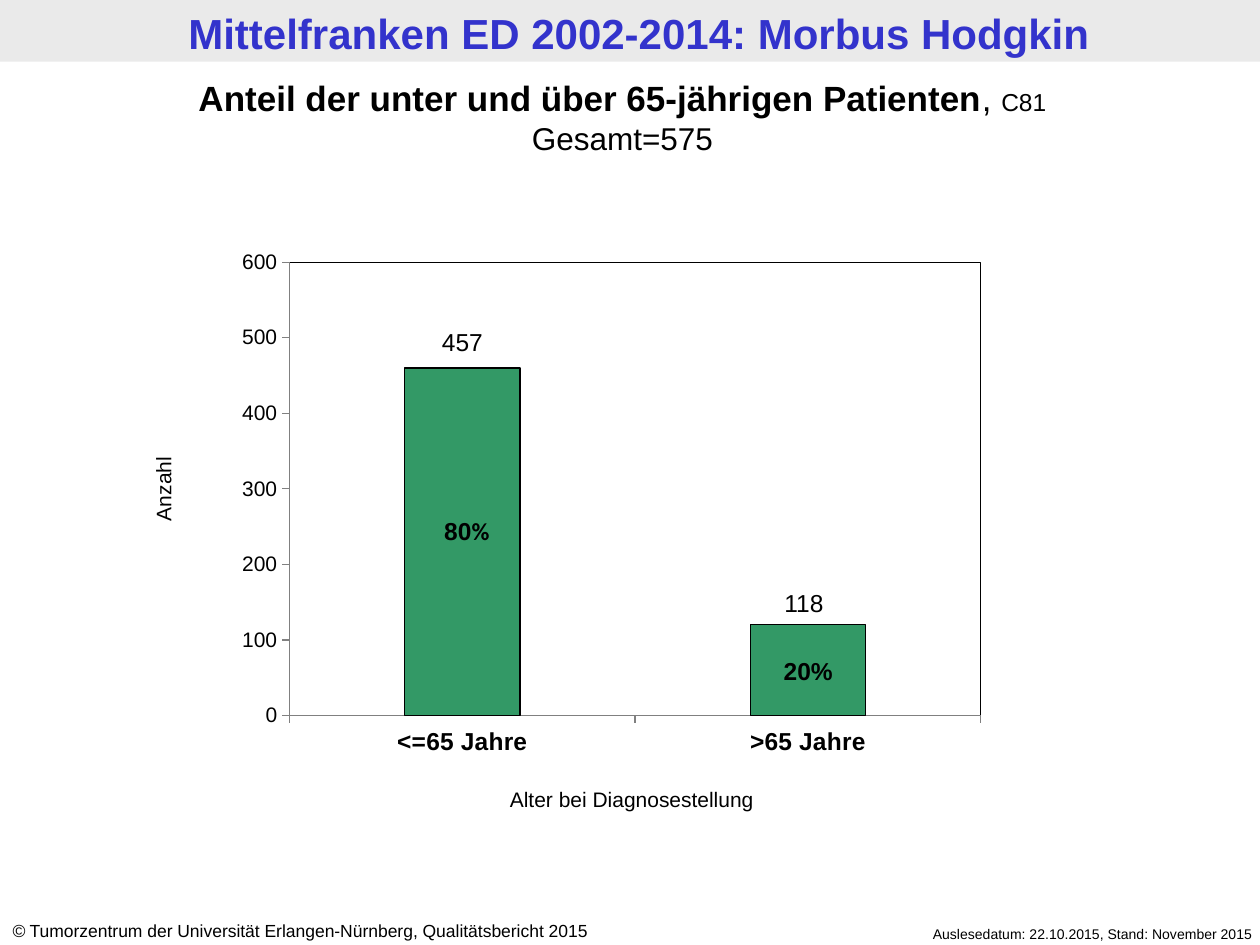
"""Build the Morbus Hodgkin age group slide with a column chart."""
from lxml.etree import SubElement
from pptx import Presentation
from pptx.chart.data import CategoryChartData
from pptx.dml.color import RGBColor
from pptx.enum.chart import XL_CHART_TYPE, XL_TICK_MARK
from pptx.enum.shapes import MSO_SHAPE
from pptx.enum.text import PP_ALIGN
from pptx.oxml import parse_xml
from pptx.oxml.ns import nsdecls, qn
from pptx.util import Inches, Pt

COLORS = {"band": "EAEAEA", "title": "3333CC", "text": "000000", "bar": "339966", "axis": "808080"}


def color(name):
    return RGBColor.from_string(COLORS[name])


def add_text(box, lines, align=PP_ALIGN.CENTER, fill="text", rotation=0):
    """Each line is (size, bold, runs); each run is (text, differing font settings)."""
    shape = slide.shapes.add_textbox(*[Inches(value) for value in box])
    shape.rotation = rotation
    frame = shape.text_frame
    frame.word_wrap = True
    for index, (size, bold, runs) in enumerate(lines):
        paragraph = frame.add_paragraph() if index else frame.paragraphs[0]
        paragraph.alignment = align
        paragraph.font.name = "Arial"
        paragraph.font.size = Pt(size)
        paragraph.font.bold = bold
        paragraph.font.color.rgb = color(fill)
        for text, settings in runs:
            run = paragraph.add_run()
            run.text = text
            for setting, value in settings.items():
                setattr(run.font, setting, value)


presentation = Presentation()
presentation.slide_width = Inches(10)
presentation.slide_height = Inches(7.5)
slide = presentation.slides.add_slide(presentation.slide_layouts[6])

band = slide.shapes.add_shape(MSO_SHAPE.RECTANGLE, 0, 0, Inches(10), Inches(0.49))
band.shadow.inherit = False
band.fill.solid()
band.fill.fore_color.rgb = color("band")
band.line.fill.background()

add_text((0.07, 0.01, 10, 0.49),
         [(24, True, [("Mittelfranken ED 2002-2014: Morbus Hodgkin", {})])], fill="title")
add_text((6.65, 7.3, 3.39, 0.24),
         [(8, False, [("Auslesedatum: 22.10.2015, Stand: November 2015", {})])], PP_ALIGN.RIGHT)
add_text((0, 7.25, 5.24, 0.27),
         [(10, False, [("©", {"italic": True}),
                       (" Tumorzentrum der Universität Erlangen-Nürnberg, Qualitätsbericht 2015", {})])],
         PP_ALIGN.LEFT)

data = CategoryChartData()
data.categories = ["<=65 Jahre", ">65 Jahre"]
data.add_series("Anzahl", [460, 120])
chart = slide.shapes.add_chart(XL_CHART_TYPE.COLUMN_STACKED, Inches(1.51), Inches(1.42),
                               Inches(6.98), Inches(4.66), data).chart
chart.has_legend = False
chart.has_title = False
chart.font.name = "Calibri"
chart.font.size = Pt(18)
chart.font.color.rgb = color("text")

plot = chart.plots[0]
plot.gap_width = 200
plot.overlap = 100
plot.vary_by_categories = False
series = plot.series[0]
series.format.fill.solid()
series.format.fill.fore_color.rgb = color("bar")
series.format.line.color.rgb = color("text")
series.format.line.width = Pt(0.75)

for axis, size, bold in ((chart.category_axis, 14, True), (chart.value_axis, 12, False)):
    axis.has_major_gridlines = False
    axis.major_tick_mark = XL_TICK_MARK.OUTSIDE
    axis.minor_tick_mark = XL_TICK_MARK.NONE
    axis.format.line.color.rgb = color("axis")
    axis.tick_labels.font.name = "Arial"
    axis.tick_labels.font.size = Pt(size)
    axis.tick_labels.font.bold = bold
    axis.tick_labels.font.color.rgb = color("text")
chart.value_axis.minimum_scale = 0
chart.value_axis.maximum_scale = 600
chart.value_axis.major_unit = 100

plot_area = chart._chartSpace.chart.plotArea
for layout in plot_area.findall(qn("c:layout")):
    plot_area.remove(layout)
layout = parse_xml(f"<c:layout {nsdecls('c')}><c:manualLayout/></c:layout>")
placement = {"layoutTarget": "inner", "xMode": "edge", "yMode": "edge",
             "x": "0.113", "y": "0.142", "w": "0.786", "h": "0.772"}
for tag, value in placement.items():
    SubElement(layout[0], qn(f"c:{tag}")).set("val", value)
plot_area.insert(0, layout)
plot_area.append(parse_xml(
    f'<c:spPr {nsdecls("c", "a")}><a:noFill/><a:ln w="9525"><a:solidFill>'
    f'<a:srgbClr val="{COLORS["text"]}"/></a:solidFill></a:ln></c:spPr>'))

add_text((0, 0.56, 9.88, 0.74),
         [(20, False, [("Anteil der unter und über 65-jährigen Patienten", {"bold": True}),
                       (", ", {}), ("C81", {"size": Pt(14)})]),
          (18, False, [("Gesamt=575", {})])])
add_text((3.27, 4.05, 0.87, 0.34), [(14, True, [("80", {}), ("%", {"name": "Calibri"})])])

labels = [
    ((5.94, 5.16, 0.95, 0.34), "20%", 14, True, 0),
    ((3.35, 6.19, 3.33, 0.3), "Alter bei Diagnosestellung", 12, False, 0),
    ((-0.01, 3.73, 2.61, 0.3), "Anzahl", 12, False, 270),
    ((3.16, 2.55, 1.02, 0.34), "457", 14, False, 0),
    ((5.87, 4.62, 1.02, 0.34), "118", 14, False, 0),
]
for box, text, size, bold, rotation in labels:
    add_text(box, [(size, bold, [(text, {})])], rotation=rotation)

presentation.save("out.pptx")
